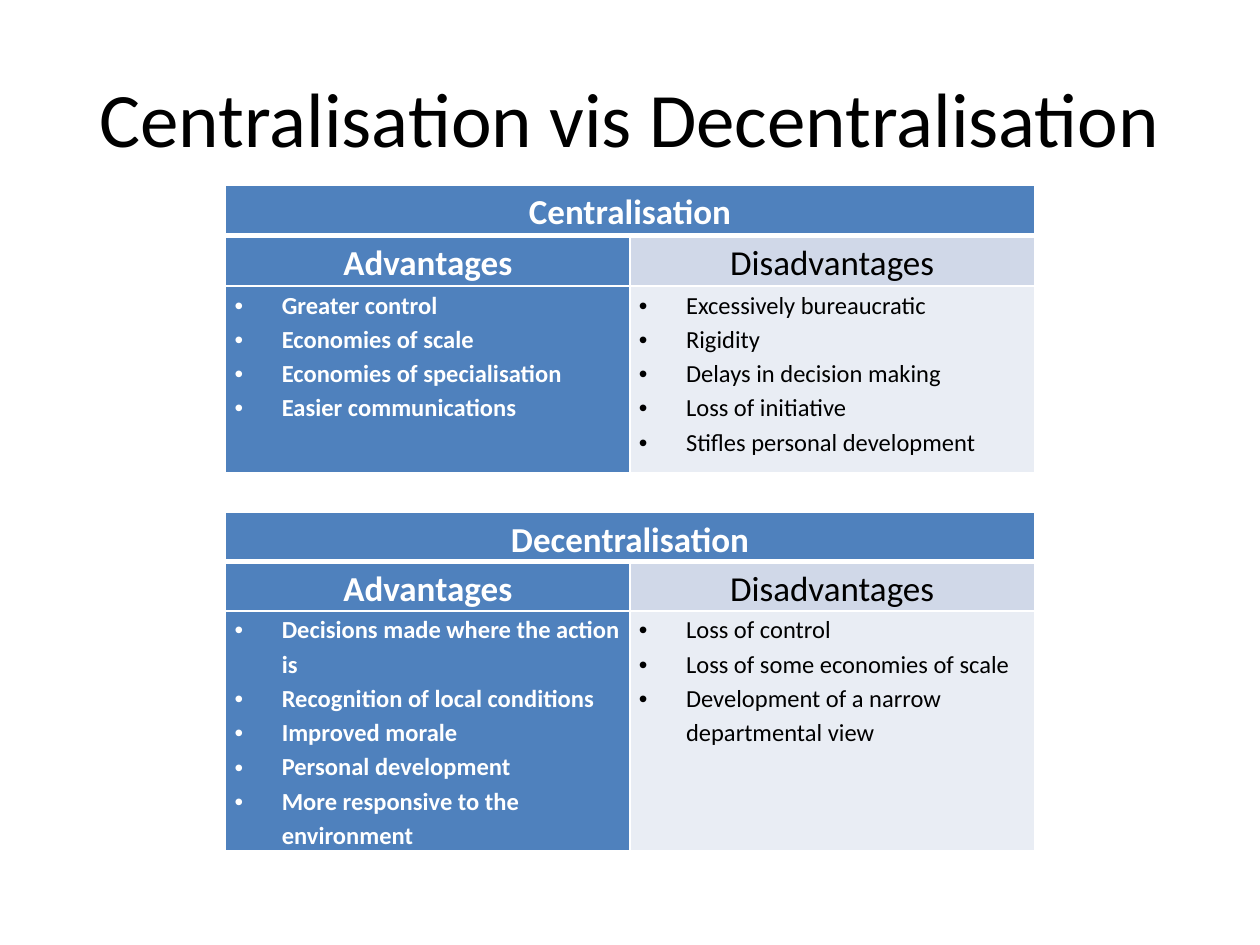
from lxml.etree import SubElement
from pptx import Presentation
from pptx.dml.color import RGBColor
from pptx.enum.text import MSO_ANCHOR, PP_ALIGN
from pptx.oxml import parse_xml
from pptx.oxml.ns import nsdecls, qn
from pptx.util import Cm, Pt

WHITE = RGBColor(0xFF, 0xFF, 0xFF)
BLACK = RGBColor(0x00, 0x00, 0x00)
BLUE = RGBColor(0x4F, 0x81, 0xBD)
PALE_BLUE = RGBColor(0xD0, 0xD8, 0xE8)
PALE_GREY = RGBColor(0xE9, 0xED, 0xF4)
FONT = "Calibri"
INDENT = Cm(0.95)


def add_span(para, text, size, color, bold=False):
    """Add one formatted run to a paragraph."""
    span = para.add_run()
    span.text = text
    span.font.name = FONT
    span.font.size = Pt(size)
    span.font.bold = bold
    span.font.color.rgb = color


def add_bullet(para):
    """Give a paragraph a hanging bullet."""
    properties = para._p.get_or_add_pPr()
    properties.set("marL", str(INDENT))
    properties.set("indent", str(-INDENT))
    SubElement(properties, qn("a:buFont"), typeface="Arial")
    SubElement(properties, qn("a:buChar"), char="•")


def add_borders(cell, bottom):
    """Draw white borders round a cell, with its own bottom width in points."""
    properties = cell._tc.get_or_add_tcPr()
    widths = {"lnL": 1, "lnR": 1, "lnT": 1, "lnB": bottom}
    for position, (side, width) in enumerate(widths.items()):
        line = parse_xml(
            f'<a:{side} {nsdecls("a")} w="{Pt(width)}"><a:solidFill>'
            f'<a:srgbClr val="{WHITE}"/></a:solidFill></a:{side}>'
        )
        properties.insert(position, line)


def fill_cell(cell, lines, fill, size, bulleted=False, bottom=1):
    """Write the lines of a cell and set its fill, margins and borders."""
    cell.fill.solid()
    cell.fill.fore_color.rgb = fill
    add_borders(cell, bottom)
    cell.margin_left = cell.margin_right = Cm(0.18)
    cell.margin_top = cell.margin_bottom = 0
    on_blue = fill == BLUE
    for index, line in enumerate(lines):
        frame = cell.text_frame
        para = frame.add_paragraph() if index else frame.paragraphs[0]
        para.line_spacing = 1.15
        if bulleted:
            add_bullet(para)
        else:
            para.alignment = PP_ALIGN.CENTER
        add_span(para, line, size, WHITE if on_blue else BLACK, bold=on_blue)


def add_comparison(page, box, heights, heading, advantages, disadvantages):
    """Add a table of advantages and disadvantages under one heading."""
    table = page.shapes.add_table(3, 2, *box).table
    for row, height in zip(table.rows, heights):
        row.height = height
    for column in table.columns:
        column.width = int(box[2] / 2)
    table.cell(0, 0).merge(table.cell(0, 1))
    fill_cell(table.cell(0, 0), [heading], BLUE, 20, bottom=3)
    fill_cell(table.cell(0, 1), [], BLUE, 20, bottom=3)
    fill_cell(table.cell(1, 0), ["Advantages"], BLUE, 20)
    fill_cell(table.cell(1, 1), ["Disadvantages"], PALE_BLUE, 20)
    fill_cell(table.cell(2, 0), advantages, BLUE, 14, bulleted=True)
    fill_cell(table.cell(2, 1), disadvantages, PALE_GREY, 14, bulleted=True)


def set_title(page, box, text):
    """Place and format the title placeholder."""
    title = page.shapes.title
    title.left, title.top, title.width, title.height = box
    frame = title.text_frame
    frame.word_wrap = True
    frame.vertical_anchor = MSO_ANCHOR.MIDDLE
    para = frame.paragraphs[0]
    para.alignment = PP_ALIGN.CENTER
    add_span(para, text, 44, BLACK)


def main():
    """Build the slide and save the deck."""
    deck = Presentation()
    deck.slide_width, deck.slide_height = Cm(25.4), Cm(19.05)
    page = deck.slides.add_slide(deck.slide_layouts[5])
    set_title(page, (Cm(1.27), Cm(0.76), Cm(22.86), Cm(3.18)),
              "Centralisation vis Decentralisation")
    left, width = Cm(4.55), Cm(16.3)
    add_comparison(
        page, (left, Cm(3.73), width, Cm(5.8)), (Cm(1.02), Cm(1.02), Cm(3.76)),
        "Centralisation",
        ["Greater control", "Economies of scale",
         "Economies of specialisation", "Easier communications"],
        ["Excessively bureaucratic", "Rigidity", "Delays in decision making",
         "Loss of initiative", "Stifles personal development"],
    )
    add_comparison(
        page, (left, Cm(10.33), width, Cm(6.4)), (Cm(0.89), Cm(0.89), Cm(4.62)),
        "Decentralisation",
        ["Decisions made where the action is", "Recognition of local conditions",
         "Improved morale", "Personal development",
         "More responsive to the environment"],
        ["Loss of control", "Loss of some economies of scale",
         "Development of a narrow departmental view"],
    )
    deck.save("out.pptx")


if __name__ == "__main__":
    main()
